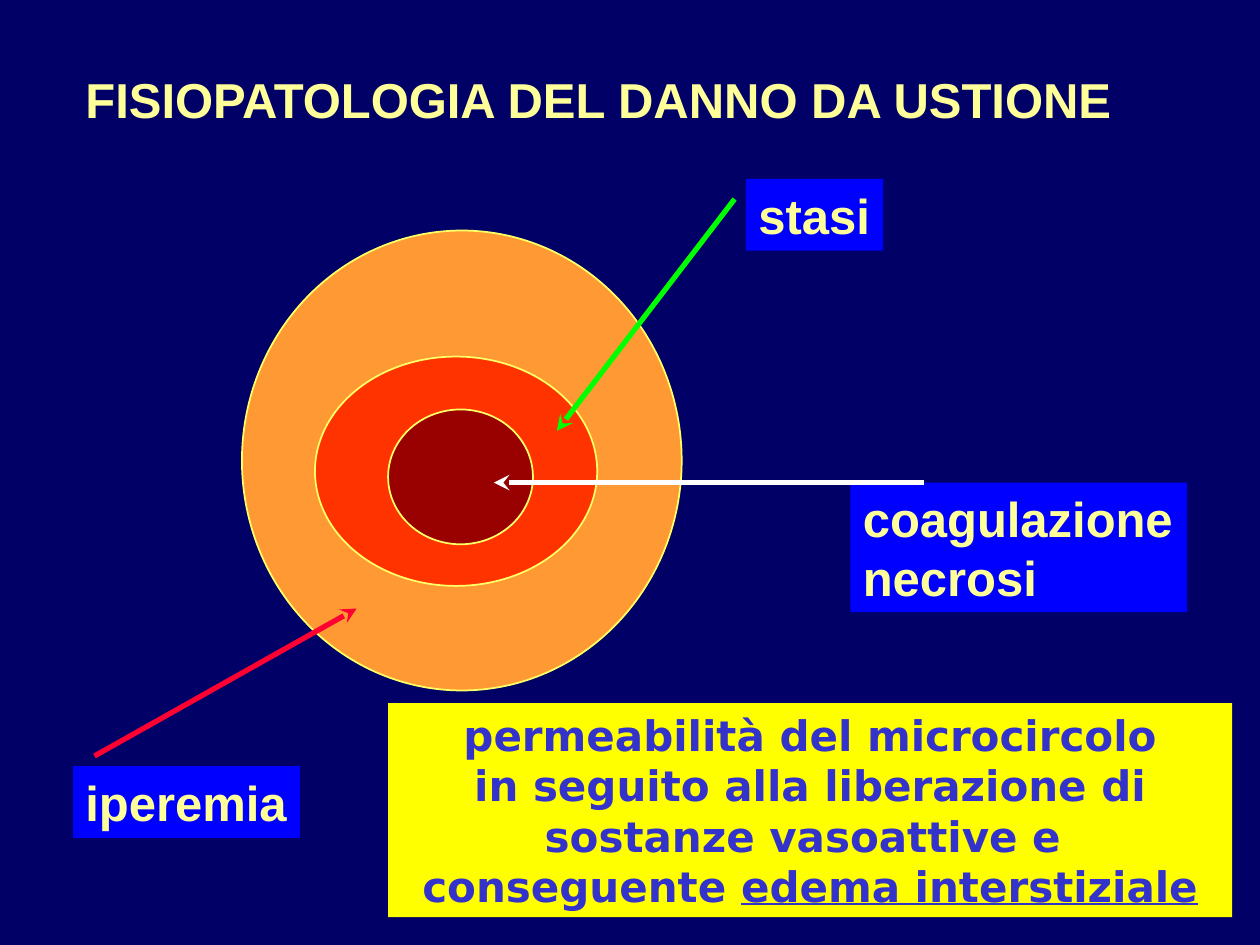
"""Build the slide on the pathophysiology of burn damage."""
from dataclasses import dataclass

from lxml import etree
from pptx import Presentation
from pptx.dml.color import RGBColor
from pptx.enum.shapes import MSO_CONNECTOR, MSO_SHAPE
from pptx.enum.text import MSO_ANCHOR, MSO_AUTO_SIZE, PP_ALIGN
from pptx.oxml.ns import qn
from pptx.util import Inches, Pt

OVAL, RECT = MSO_SHAPE.OVAL, MSO_SHAPE.RECTANGLE
STRAIGHT = MSO_CONNECTOR.STRAIGHT
TOP = MSO_ANCHOR.TOP
FIT = MSO_AUTO_SIZE.SHAPE_TO_FIT_TEXT
LEFT, CENTER = PP_ALIGN.LEFT, PP_ALIGN.CENTER

COLORS = {
    "background": "000066", "label": "0000FF", "label_text": "FFFF99",
    "note": "FFFF00", "note_text": "3333CC", "outline": "FFFF66",
    "hyperemia": "FF9933", "stasis": "FF3300", "necrosis": "990000",
    "red": "FF0033", "green": "00FF00", "white": "FFFFFF",
}
LABEL_FONT = {"name": "Arial", "size": Pt(28), "bold": True}
NOTE_FONT = {"name": "DejaVu Sans", "size": Pt(24), "bold": True}


@dataclass
class Zone:
    box: tuple
    fill: str


@dataclass
class Panel:
    box: tuple
    lines: list
    fill: str | None = "label"
    color: str = "label_text"
    font: dict | None = None
    align: PP_ALIGN = LEFT
    wrap: bool = False


@dataclass
class Arrow:
    tail: tuple
    tip: tuple
    color: str


ZONES = [
    Zone((1.92, 1.83, 3.49, 3.65), "hyperemia"),
    Zone((2.5, 2.83, 2.24, 1.82), "stasis"),
    Zone((3.08, 3.25, 1.15, 1.07), "necrosis"),
]
PANELS = [
    Panel((0.58, 0.5, 8.45, 0.57), [["FISIOPATOLOGIA DEL DANNO DA USTIONE"]], fill=None),
    Panel((0.58, 6.08, 1.8, 0.57), [["iperemia"]]),
    Panel((5.92, 1.42, 1.09, 0.57), [["stasi"]]),
    Panel((6.75, 3.83, 2.67, 1.03), [["coagulazione"], ["necrosi"]]),
    Panel((3.08, 5.58, 6.7, 1.7),
          [["permeabilità del microcircolo"], ["in seguito alla liberazione di"],
           ["sostanze vasoattive e "], ["conseguente ", "edema interstiziale"]],
          "note", "note_text", NOTE_FONT, CENTER, True),
]
ARROWS = [
    Arrow((0.75, 6), (2.83, 4.83), "red"),
    Arrow((5.83, 1.58), (4.42, 3.42), "green"),
    Arrow((7.33, 3.83), (3.92, 3.83), "white"),
]


def rgb(name: str) -> RGBColor:
    """Return the named colour."""
    return RGBColor.from_string(COLORS[name])


def set_all(target, values: dict) -> None:
    """Set each attribute from a dict of format values."""
    for key, value in values.items():
        setattr(target, key, value)


def add_filled(s, kind, box: tuple, fill: str):
    """Add a flat preset shape with a solid fill."""
    sp = s.shapes.add_shape(kind, *map(Inches, box))
    sp.shadow.inherit = False
    sp.fill.solid()
    sp.fill.fore_color.rgb = rgb(fill)
    return sp


def add_zone(s, zone: Zone) -> None:
    """Add one outlined zone of the burn."""
    sp = add_filled(s, OVAL, zone.box, zone.fill)
    sp.line.color.rgb = rgb("outline")
    sp.line.width = Pt(1)


def add_panel(s, panel: Panel) -> None:
    """Add a block of text, on a filled rectangle if it has a fill."""
    if panel.fill:
        sp = add_filled(s, RECT, panel.box, panel.fill)
        sp.line.fill.background()
    else:
        sp = s.shapes.add_textbox(*map(Inches, panel.box))
    tf = sp.text_frame
    set_all(tf, {"word_wrap": panel.wrap, "auto_size": FIT, "vertical_anchor": TOP})
    for i, line in enumerate(panel.lines):
        p = tf.add_paragraph() if i else tf.paragraphs[0]
        p.alignment = panel.align
        for j, text in enumerate(line):
            r = p.add_run()
            r.text = text
            set_all(r.font, panel.font or LABEL_FONT)
            r.font.color.rgb = rgb(panel.color)
            if j:
                r.font.underline = True


def add_arrow(s, arrow: Arrow) -> None:
    """Add a straight line with a stealth head at its tip."""
    cn = s.shapes.add_connector(STRAIGHT, *map(Inches, arrow.tail + arrow.tip))
    cn.line.color.rgb = rgb(arrow.color)
    cn.line.width = Pt(3)
    etree.SubElement(cn.line._get_or_add_ln(), qn("a:tailEnd"), type="stealth")
    etree.SubElement(cn._element.spPr, qn("a:effectLst"))


def main() -> None:
    """Build and save the slide."""
    prs = Presentation()
    set_all(prs, {"slide_width": Inches(10), "slide_height": Inches(7.5)})
    s = prs.slides.add_slide(prs.slide_layouts[6])
    s.background.fill.solid()
    s.background.fill.fore_color.rgb = rgb("background")
    for draw, items in ((add_zone, ZONES), (add_panel, PANELS), (add_arrow, ARROWS)):
        for item in items:
            draw(s, item)
    prs.save("out.pptx")


if __name__ == "__main__":
    main()
